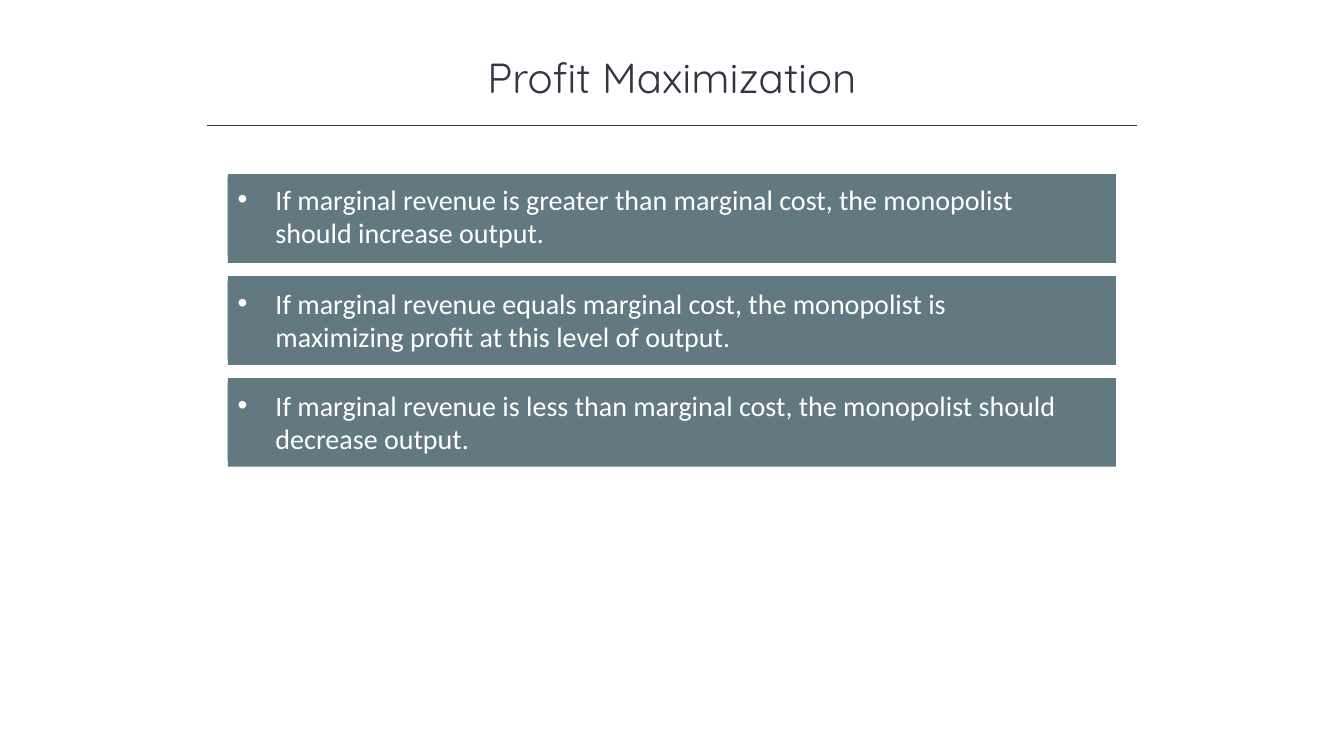
from lxml import etree
from pptx import Presentation
from pptx.dml.color import RGBColor
from pptx.enum import shapes, text
from pptx.oxml import ns
from pptx.util import Pt

INK = RGBColor(0x32, 0x35, 0x42)
SLATE = RGBColor(0x62, 0x79, 0x81)
WHITE = RGBColor(0xFF, 0xFF, 0xFF)

RULES = [
    (126.7, "If marginal revenue is greater than marginal cost, the monopolist should increase output."),
    (200.9, "If marginal revenue equals marginal cost, the monopolist is maximizing profit at this level of output."),
    (273.6, "If marginal revenue is less than marginal cost, the monopolist should decrease output."),
]


def add_rect(group, top, width, height):
    rect = group.shapes.add_shape(
        shapes.MSO_SHAPE.RECTANGLE, Pt(162.7), Pt(top), Pt(width), Pt(height))
    rect.shadow.inherit = False
    rect.fill.solid()
    rect.fill.fore_color.rgb = SLATE
    rect.line.fill.background()
    return rect


def set_font(para, name, size, color):
    para.font.name = name
    para.font.size = Pt(size)
    para.font.color.rgb = color


deck = Presentation()
deck.slide_width, deck.slide_height = Pt(960), Pt(540)
slide = deck.slides.add_slide(deck.slide_layouts[5])

title = slide.shapes.title
title.left, title.top, title.width, title.height = Pt(120), Pt(33.1), Pt(720), Pt(43.9)
title.text = "Profit Maximization"
frame = title.text_frame
frame.auto_size = text.MSO_AUTO_SIZE.SHAPE_TO_FIT_TEXT
frame.vertical_anchor = text.MSO_ANCHOR.TOP
para = frame.paragraphs[0]
para.alignment = text.PP_ALIGN.CENTER
set_font(para, "Quicksand", 30, INK)

line = slide.shapes.add_connector(
    shapes.MSO_CONNECTOR.STRAIGHT, Pt(148), Pt(89.5), Pt(812), Pt(89.5))
line.line.color.rgb = INK
line.line.width = Pt(1)
etree.SubElement(line.element.spPr, ns.qn("a:effectLst"))

for row, (top, words) in enumerate(RULES):
    group = slide.shapes.add_group_shape()
    add_rect(group, 124.4 + 72.8 * row, 634.3, 63.4)
    label = add_rect(group, top, 614.9, 55.7)
    frame = label.text_frame
    frame.word_wrap = True
    frame.auto_size = text.MSO_AUTO_SIZE.SHAPE_TO_FIT_TEXT
    frame.vertical_anchor = text.MSO_ANCHOR.TOP
    frame.text = words
    para = frame.paragraphs[0]
    para.alignment = text.PP_ALIGN.LEFT
    set_font(para, "Calibri", 20, WHITE)
    props = para._p.get_or_add_pPr()
    props.set("marL", str(Pt(27)))
    props.set("indent", str(Pt(-27)))
    font = etree.Element(ns.qn("a:buFont"), typeface="Arial")
    mark = etree.Element(ns.qn("a:buChar"), char="•")
    props.insert(0, font)
    props.insert(1, mark)

deck.save("out.pptx")
